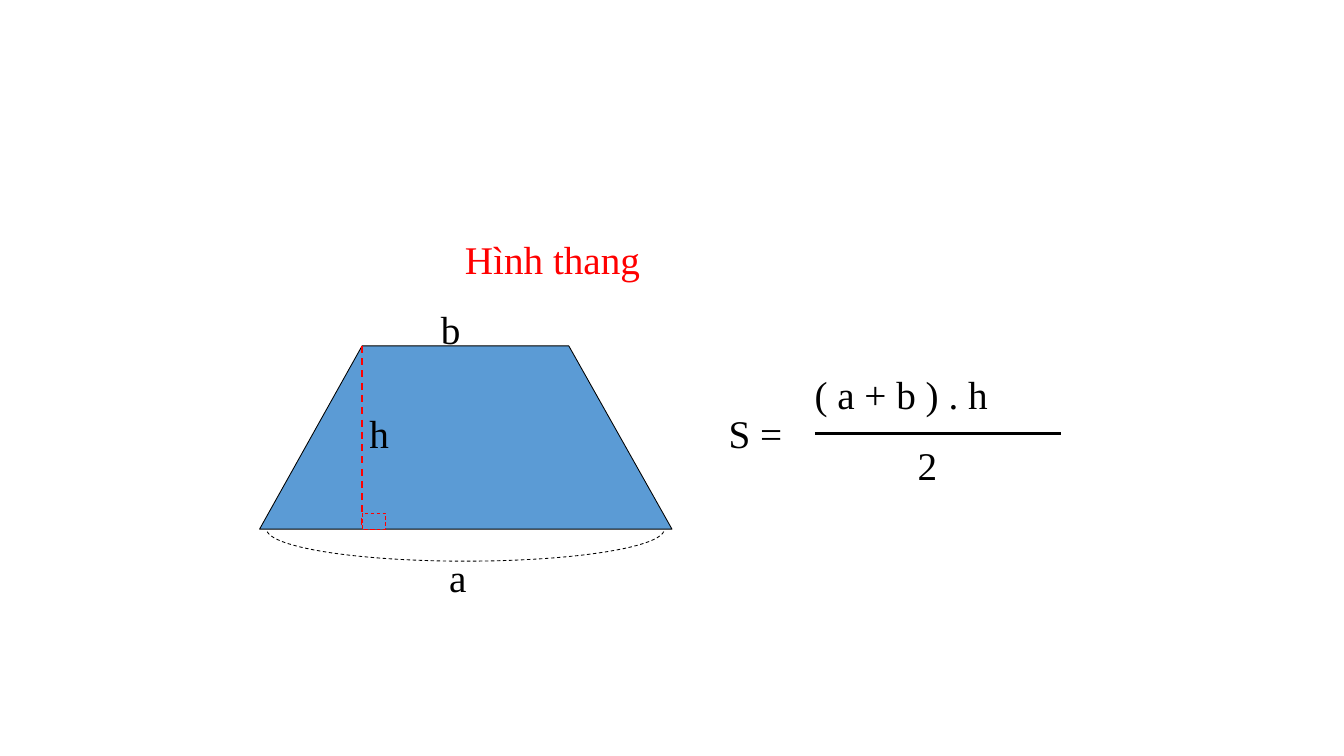
"""Build a slide with the area formula of a trapezoid."""
from lxml.etree import SubElement
from pptx import Presentation
from pptx.dml.color import RGBColor
from pptx.enum.dml import MSO_LINE
from pptx.enum.shapes import MSO_CONNECTOR, MSO_SHAPE
from pptx.enum.text import MSO_ANCHOR
from pptx.oxml.ns import qn
from pptx.util import Cm, Pt

COLORS = {"blue": "5B9BD5", "red": "FF0000", "black": "000000"}
LEFT, RIGHT, TOP, BOTTOM = 7.85, 20.32, 10.46, 16
TOP_LEFT, TOP_RIGHT = 10.95, 17.2
FRACTION_Y = 13.11

presentation = Presentation()
presentation.slide_width = Cm(40.64)
presentation.slide_height = Cm(22.86)
slide = presentation.slides.add_slide(presentation.slide_layouts[6])


def add_text(text, left, top, width, color="black", size=33.6, font="Times New Roman"):
    box = slide.shapes.add_textbox(Cm(left), Cm(top), Cm(width), Cm(1.7))
    frame = box.text_frame
    frame.word_wrap = True
    frame.vertical_anchor = MSO_ANCHOR.TOP
    frame.margin_left = frame.margin_right = Cm(0.22)
    frame.margin_top, frame.margin_bottom = Cm(0.25), Cm(0)
    run = frame.paragraphs[0].add_run()
    run.text = text
    run.font.name = font
    run.font.size = Pt(size)
    run.font.color.rgb = RGBColor.from_string(COLORS[color])


def style_shape(shape, line, width=0.75, fill=None, dashed=False):
    shape.line.color.rgb = RGBColor.from_string(COLORS[line])
    shape.line.width = Pt(width)
    if dashed:
        shape.line.dash_style = MSO_LINE.DASH
    if shape in connectors:
        SubElement(shape._element.spPr, qn("a:effectLst"))
        return
    shape.shadow.inherit = False
    if fill:
        shape.fill.solid()
        shape.fill.fore_color.rgb = RGBColor.from_string(COLORS[fill])
    else:
        shape.fill.background()


height_line = slide.shapes.add_connector(
    MSO_CONNECTOR.STRAIGHT, Cm(TOP_LEFT), Cm(TOP), Cm(TOP_LEFT), Cm(BOTTOM))
fraction_bar = slide.shapes.add_connector(
    MSO_CONNECTOR.STRAIGHT, Cm(24.64), Cm(FRACTION_Y), Cm(32.08), Cm(FRACTION_Y))
connectors = [height_line, fraction_bar]

builder = slide.shapes.build_freeform(Cm(RIGHT), Cm(BOTTOM))
builder.add_line_segments(
    [(Cm(x), Cm(y)) for x, y in [(TOP_RIGHT, TOP), (TOP_LEFT, TOP), (LEFT, BOTTOM)]], close=True)
trapezoid = builder.convert_to_shape()
style_shape(trapezoid, "black", fill="blue")
height_line._element.addprevious(trapezoid._element)

style_shape(height_line, "red", width=1.5, dashed=True)
style_shape(fraction_bar, "black", width=2.25)

right_angle = slide.shapes.add_shape(
    MSO_SHAPE.RECTANGLE, Cm(TOP_LEFT), Cm(BOTTOM - 0.48), Cm(0.71), Cm(0.48))
style_shape(right_angle, "red", fill="blue", dashed=True)

brace_curves = [
    [(8.08, 16.08), (8.36, 16.59), (10.95, 16.97), (14.07, 16.97)],
    [(14.07, 16.97), (17.4, 16.97), (20.09, 16.54), (20.09, 16)],
]
steps = 24
brace_points = []
for curve in brace_curves:
    for step in range(1, steps + 1):
        t = step / steps
        weights = [(1 - t) ** 3, 3 * t * (1 - t) ** 2, 3 * t ** 2 * (1 - t), t ** 3]
        brace_points.append(tuple(
            Cm(sum(weight * point[axis] for weight, point in zip(weights, curve)))
            for axis in (0, 1)))
builder = slide.shapes.build_freeform(Cm(8.08), Cm(16.08))
builder.add_line_segments(brace_points, close=False)
style_shape(builder.convert_to_shape(), "black", dashed=True)

add_text("Hình thang", 13.84, 6.86, 12.73, color="red")
for text, left, top, width in [
    ("b", 13.11, 8.99, 2.64),
    ("a", 13.36, 16.48, 1.93),
    ("h", TOP_LEFT, 12.14, 1.68),
    ("S =", 21.81, 12.14, 3.3),
    ("( a + b ) . h", 24.41, 10.95, 8.41),
    ("2", 27.53, FRACTION_Y, 2.64),
]:
    add_text(text, left, top, width)

presentation.save("out.pptx")
